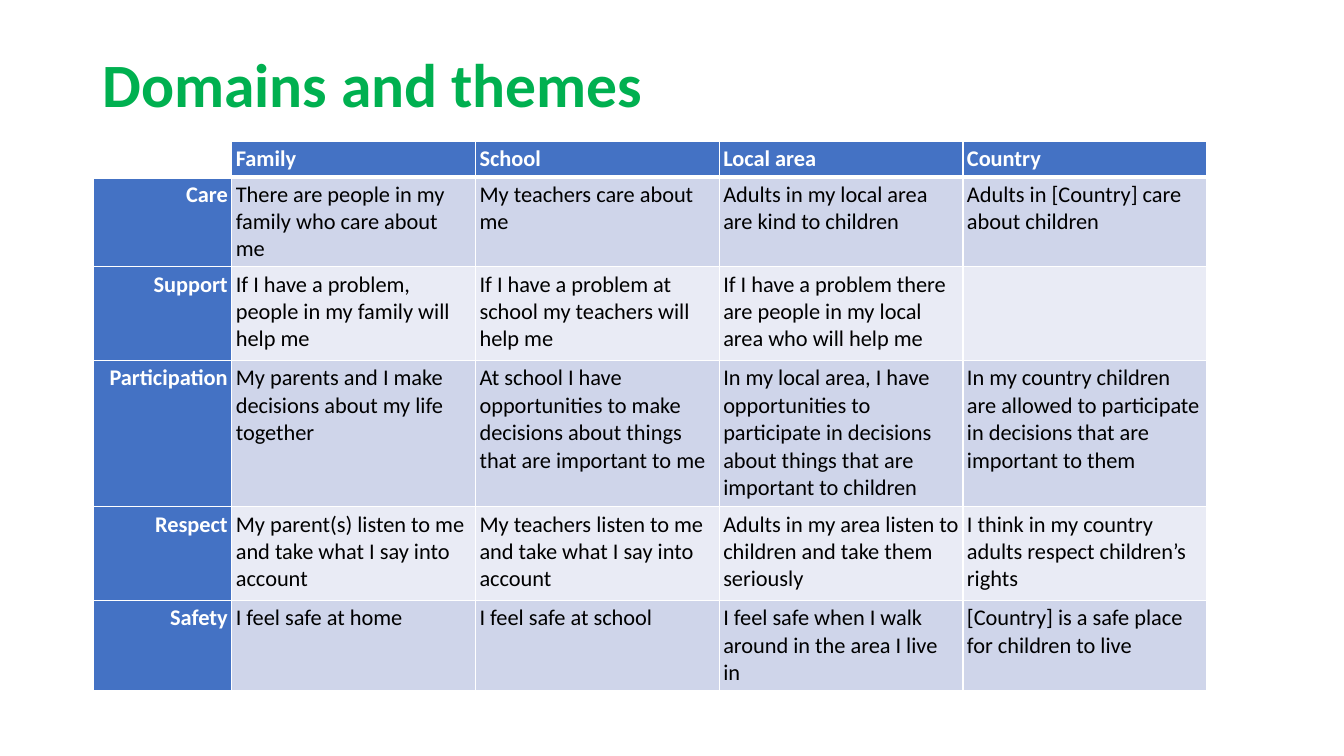
from lxml import etree
from pptx import Presentation
from pptx.dml.color import RGBColor
from pptx.enum.text import MSO_ANCHOR, PP_ALIGN
from pptx.oxml.ns import qn
from pptx.util import Pt

MIDDLE = MSO_ANCHOR.MIDDLE
LEFT, RIGHT = PP_ALIGN.LEFT, PP_ALIGN.RIGHT
BLUE, WHITE, BLACK, GREEN = "4472C4", "FFFFFF", "000000", "00B050"
BANDS = ["CFD5EA", "E9EBF5"]


def add_run(paragraph, text, size, color, bold):
    run = paragraph.add_run()
    run.text = text
    run.font.name = "Calibri"
    run.font.size = Pt(size)
    run.font.bold = bold
    run.font.color.rgb = RGBColor.from_string(color)


def add_border(cell, side, width):
    properties = cell._tc.get_or_add_tcPr()
    line = etree.SubElement(properties, qn(f"a:ln{side}"), w=str(Pt(width)))
    fill = etree.SubElement(line, qn("a:solidFill"))
    etree.SubElement(fill, qn("a:srgbClr"), val=WHITE)


presentation = Presentation()
presentation.slide_width = Pt(960)
presentation.slide_height = Pt(540)
slide = presentation.slides.add_slide(presentation.slide_layouts[6])

title = slide.shapes.add_textbox(Pt(66), Pt(28.8), Pt(619.2), Pt(67))
title.text_frame.word_wrap = True
title.text_frame.vertical_anchor = MIDDLE
paragraph = title.text_frame.paragraphs[0]
paragraph.line_spacing = 0.9
add_run(paragraph, "Domains and themes", 44, GREEN, True)

rows = [
    ["", "Family", "School", "Local area", "Country"],
    ["Care",
     "There are people in my family who care about me",
     "My teachers care about me",
     "Adults in my local area are kind to children",
     "Adults in [Country] care about children"],
    ["Support",
     "If I have a problem, people in my family will help me",
     "If I have a problem at school my teachers will help me",
     "If I have a problem there are people in my local area who will help me",
     ""],
    ["Participation",
     "My parents and I make decisions about my life together",
     "At school I have opportunities to make decisions about things that are important to me",
     "In my local area, I have opportunities to participate in decisions about things that are important to children",
     "In my country children are allowed to participate in decisions that are important to them"],
    ["Respect",
     "My parent(s) listen to me and take what I say into account",
     "My teachers listen to me and take what I say into account",
     "Adults in my area listen to children and take them seriously",
     "I think in my country adults respect children’s rights"],
    ["Safety",
     "I feel safe at home",
     "I feel safe at school",
     "I feel safe when I walk around in the area I live in",
     "[Country] is a safe place for children to live"],
]
column_widths = [99.2] + [174.1] * 4
row_heights = [25.3, 64.3, 67, 104.4, 67, 64.3]

frame = slide.shapes.add_table(len(rows), len(column_widths), Pt(66.4), Pt(101),
                               Pt(sum(column_widths)), Pt(sum(row_heights)))
table = frame.table
table.first_row = False
table.horz_banding = False
for column, width in zip(table.columns, column_widths):
    column.width = Pt(width)

for row_index, (texts, height) in enumerate(zip(rows, row_heights)):
    table.rows[row_index].height = Pt(height)
    for column_index, text in enumerate(texts):
        cell = table.cell(row_index, column_index)
        cell.margin_left = cell.margin_right = Pt(2.9)
        cell.margin_top = cell.margin_bottom = Pt(2.9)
        add_border(cell, "L", 1)
        add_border(cell, "R", 1)
        add_border(cell, "T", 3 if row_index == 1 else 1)
        add_border(cell, "B", 3 if row_index == 0 else 1)

        heading = row_index == 0 or column_index == 0
        if row_index == 0 and column_index == 0:
            cell.fill.background()
        else:
            cell.fill.solid()
            color = BLUE if heading else BANDS[(row_index - 1) % 2]
            cell.fill.fore_color.rgb = RGBColor.from_string(color)

        paragraph = cell.text_frame.paragraphs[0]
        paragraph.alignment = RIGHT if column_index == 0 else LEFT
        if text:
            add_run(paragraph, text, 16, WHITE if heading else BLACK, heading)
        else:
            etree.SubElement(paragraph._p, qn("a:endParaRPr"), sz="1600")

presentation.save("out.pptx")
